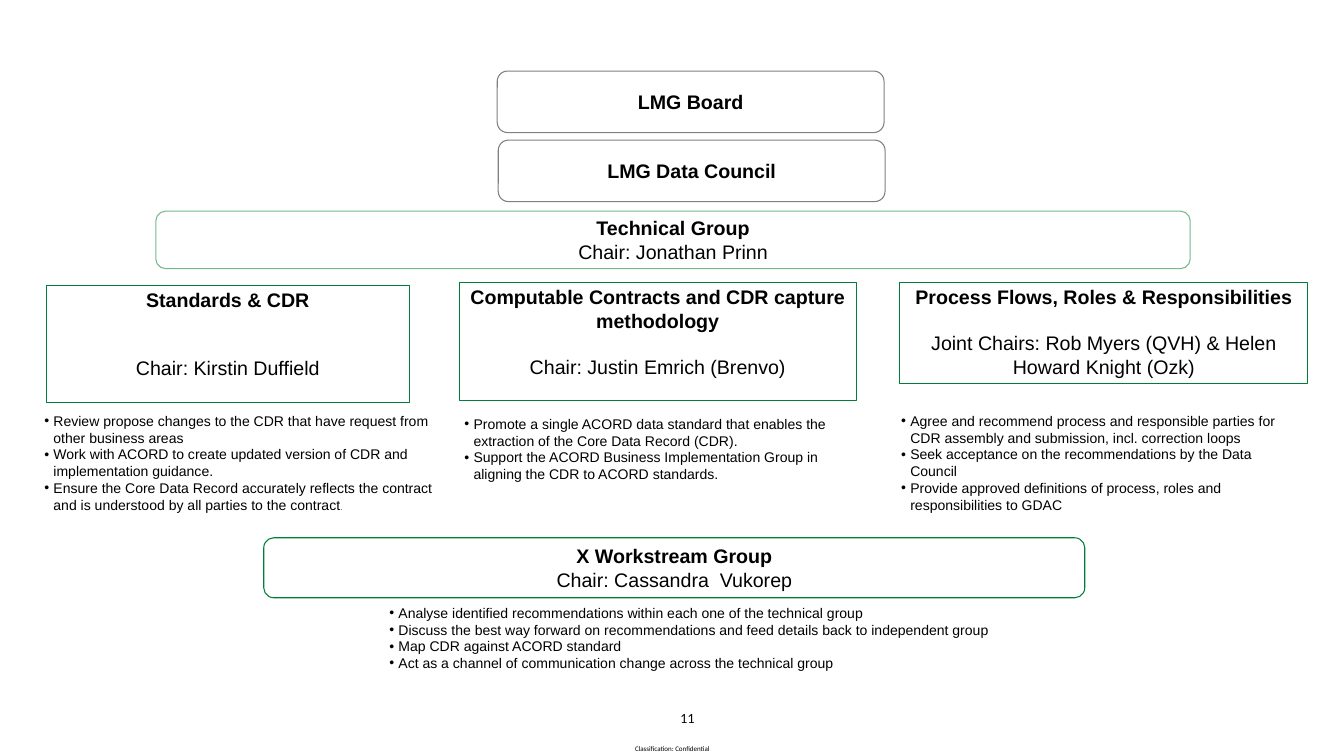
from lxml import etree
from pptx import Presentation
from pptx import util as u
from pptx.dml import color
from pptx.enum import shapes, text
from pptx.oxml import ns

PX = 9144
GREEN, GREY, BLACK = "007E39", "808080", "000000"
MID, TOP = text.MSO_ANCHOR.MIDDLE, text.MSO_ANCHOR.TOP
LEFT, CENTER, RIGHT = text.PP_ALIGN.LEFT, text.PP_ALIGN.CENTER, text.PP_ALIGN.RIGHT


def paint(hue):
    return color.RGBColor.from_string(hue)


def write(part, words, size, bold=False, face="Arial"):
    run = part.add_run()
    run.text = words
    for key, val in dict(size=u.Pt(size), bold=bold, name=face).items():
        setattr(run.font, key, val)
    run.font.color.rgb = paint(BLACK)


deck = Presentation()
deck.slide_width, deck.slide_height = 2665 * PX, 1500 * PX
slide = deck.slides.add_slide(deck.slide_layouts.get_by_name("Comparison"))
title = slide.shapes.title
title._element.getparent().remove(title._element)

RECT, ROUND = shapes.MSO_SHAPE.RECTANGLE, shapes.MSO_SHAPE.ROUNDED_RECTANGLE
boxes = [
    (RECT, (92, 566, 719, 233), GREEN, 0.75, 64,
     "Standards & CDR", "Chair: Kirstin Duffield"),
    (RECT, (910, 561, 788, 233), GREEN, 0.75, 32,
     "Computable Contracts and CDR capture methodology", "Chair: Justin Emrich (Brenvo)"),
    (RECT, (1784, 561, 809, 199), GREEN, 0.75, 32,
     "Process Flows, Roles & Responsibilities",
     "Joint Chairs: Rob Myers (QVH) & Helen Howard Knight (Ozk)"),
    (ROUND, (986, 141, 767, 122), GREY, 1.5, 0, "LMG Board", None),
    (ROUND, (988, 278, 767, 122), GREY, 1.5, 0, "LMG Data Council", None),
    (ROUND, (309, 419, 2051, 114), GREEN, 1.5, 0,
     "Technical Group", "Chair: Jonathan Prinn"),
    (ROUND, (523, 1067, 1628, 119), GREEN, 1.5, 0,
     "X Workstream Group", "Chair: Cassandra  Vukorep"),
]
for kind, area, hue, width, gap, head, chair in boxes:
    box = slide.shapes.add_shape(kind, *[n * PX for n in area])
    box.shadow.inherit = False
    box.fill.background()
    box.line.color.rgb = paint(hue)
    box.line.width = u.Pt(width)
    if head == "Technical Group":
        tint = box.line._ln.find(".//" + ns.qn("a:srgbClr"))
        etree.SubElement(tint, ns.qn("a:alpha"), val="54000")
    frame = box.text_frame
    frame.word_wrap = True
    frame.vertical_anchor = TOP if kind == RECT else MID
    para = frame.paragraphs[0]
    para.alignment = CENTER
    write(para, head, 28, True)
    if chair:
        para = frame.add_paragraph()
        para.alignment = CENTER
        para.space_before = u.Pt(gap)
        write(para, chair, 28)

lists = [
    ((58, 813, 831, 248), [
        "Review propose changes to the CDR that have request from other business areas",
        "Work with ACORD to create updated version of CDR and implementation guidance.",
        "Ensure the Core Data Record accurately reflects the contract and is understood by all parties to the contract"]),
    ((891, 819, 831, 170), [
        "Promote a single ACORD data standard that enables the extraction of the Core Data Record (CDR).",
        "Support the ACORD Business Implementation Group in aligning the CDR to ACORD standards."]),
    ((1757, 813, 831, 248), [
        "Agree and recommend process and responsible parties for CDR assembly and submission, incl. correction loops",
        "Seek acceptance on the recommendations by the Data Council",
        "Provide approved definitions of process, roles and responsibilities to GDAC"]),
    ((742, 1194, 1409, 170), [
        "Analyse identified recommendations within each one of the technical group",
        "Discuss the best way forward on recommendations and feed details back to independent group",
        "Map CDR against ACORD standard",
        "Act as a channel of communication change across the technical group"]),
]
for body, (area, items) in zip(list(slide.placeholders), lists):
    for key, val in zip(("left", "top", "width", "height"), area):
        setattr(body, key, val * PX)
    frame = body.text_frame
    for key, val in dict(word_wrap=True, vertical_anchor=TOP,
                         auto_size=text.MSO_AUTO_SIZE.NONE).items():
        setattr(frame, key, val)
    for i, item in enumerate(items):
        para = frame.add_paragraph() if i else frame.paragraphs[0]
        para.alignment = LEFT
        para.space_before = u.Pt(0)
        props = para._p.get_or_add_pPr()
        props.set("marL", str(38 * PX))
        props.set("indent", str(-18 * PX))
        etree.SubElement(props, ns.qn("a:buFont"), typeface="Arial")
        etree.SubElement(props, ns.qn("a:buChar"), char="•")
        write(para, item, 20)
        if item.endswith("to the contract"):
            write(para, ".", 10)

notes = [
    ((1242, 1471, 182, 29), "Classification: Confidential", 10, "Calibri", CENTER, MID),
    ((984, 1411, 394, 39), "11", 18, "Lato", RIGHT, TOP),
]
for area, words, size, face, align, anchor in notes:
    frame = slide.shapes.add_textbox(*[n * PX for n in area]).text_frame
    for key, val in dict(margin_left=0, margin_right=0, margin_top=0, margin_bottom=0,
                         word_wrap=True, vertical_anchor=anchor).items():
        setattr(frame, key, val)
    frame.paragraphs[0].alignment = align
    write(frame.paragraphs[0], words, size, face=face)

deck.save("out.pptx")
